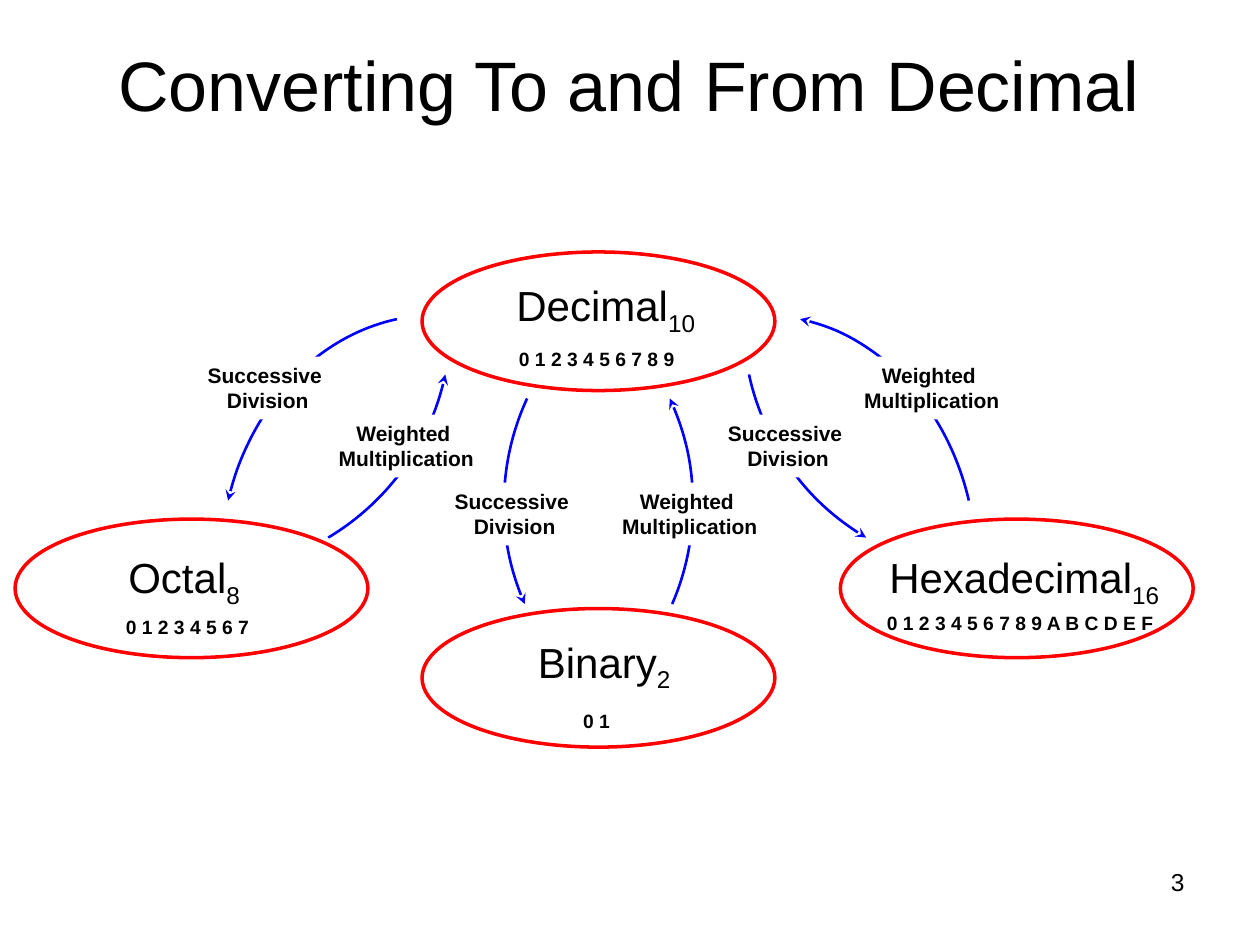
from lxml import etree
from pptx import Presentation
from pptx.dml.color import RGBColor
from pptx.enum.shapes import MSO_SHAPE
from pptx.enum.text import MSO_ANCHOR, MSO_AUTO_SIZE, PP_ALIGN
from pptx.oxml.ns import qn
from pptx.util import Inches, Pt

ARC, OVAL, RECT = MSO_SHAPE.ARC, MSO_SHAPE.OVAL, MSO_SHAPE.RECTANGLE
LEFT, CENTER, RIGHT = PP_ALIGN.LEFT, PP_ALIGN.CENTER, PP_ALIGN.RIGHT
TOP, MIDDLE = MSO_ANCHOR.TOP, MSO_ANCHOR.MIDDLE
FIT_SHAPE = MSO_AUTO_SIZE.SHAPE_TO_FIT_TEXT

FONT = "Arial"
COLORS = {"text": "000000", "paper": "FFFFFF", "arrow": "0000FF", "oval": "FF0000"}
DEGREE = 60000 / 100000  # one degree in adjustment units

DIVISION = "Successive \nDivision"
MULTIPLICATION = "Weighted \nMultiplication"

# Arc box, start and end angle, mirrored, line end that carries the arrowhead
ARROWS = [
    ((-0.42, 0.55, 4, 4), 12.2, 59.16, False, "headEnd"),
    ((1.75, 2.5, 3.42, 4), 197.7, 261.04, False, "headEnd"),
    ((4.33, 2.5, 3.42, 4), 197.7, 261.04, True, "tailEnd"),
    ((5.9, 0.55, 4, 4), 12.2, 59.16, True, "tailEnd"),
    ((4, 2, 4, 4), 335.26, 23.4, True, "tailEnd"),
    ((1.5, 2, 4, 4), 335.26, 23.4, False, "headEnd"),
]

METHODS = [
    (DIVISION, (1.5, 2.83, 1.25, 0.5)),
    (MULTIPLICATION, (2.58, 3.29, 1.29, 0.5)),
    (DIVISION, (5.67, 3.29, 1.17, 0.5)),
    (MULTIPLICATION, (6.75, 2.83, 1.29, 0.5)),
    (DIVISION, (3.5, 3.83, 1.17, 0.5)),
    (MULTIPLICATION, (4.83, 3.83, 1.29, 0.5)),
]

# Name, base, name box, oval corner, digits, digits box
NUMBER_SYSTEMS = [
    ("Octal", "8", (0.92, 4.33, 1.11, 0.5), (0.12, 4.12),
     "0 1 2 3 4 5 6 7", (0.9, 4.83, 1.18, 0.29)),
    ("Hexadecimal", "16", (6.96, 4.33, 2.4, 0.5), (6.67, 4.12),
     "0 1 2 3 4 5 6 7 8 9 A B C D E F", (6.94, 4.8, 2.32, 0.29)),
    ("Binary", "2", (4.17, 5, 1.28, 0.5), (3.35, 4.83),
     "0 1", (4.53, 5.58, 0.42, 0.29)),
    ("Decimal", "10", (4, 2.17, 1.67, 0.51), (3.35, 2),
     "0 1 2 3 4 5 6 7 8 9", (4.02, 2.71, 1.48, 0.29)),
]


def color(name):
    return RGBColor.from_string(COLORS[name])


def inches(box):
    return [Inches(value) for value in box]


def style_text(frame, size, bold=False, align=LEFT, anchor=TOP):
    frame.vertical_anchor = anchor
    for paragraph in frame.paragraphs:
        paragraph.alignment = align
        for run in paragraph.runs:
            run.font.name = FONT
            run.font.size = Pt(size)
            run.font.bold = bold
            run.font.color.rgb = color("text")


def add_outline(slide, preset, box, line_color, width):
    shape = slide.shapes.add_shape(preset, *inches(box))
    shape.shadow.inherit = False
    shape.fill.background()
    shape.line.color.rgb = color(line_color)
    shape.line.width = Pt(width)
    return shape


def add_arc_arrow(slide, box, start, end, mirrored, arrow_end):
    arc = add_outline(slide, ARC, box, "arrow", 1.5)
    arc.adjustments[0] = start * DEGREE
    arc.adjustments[1] = end * DEGREE
    properties = arc.element.spPr
    if mirrored:
        properties.find(qn("a:xfrm")).set("flipH", "1")
    etree.SubElement(properties.find(qn("a:ln")), qn("a:" + arrow_end), type="stealth")


def add_method(slide, text, box):
    """Add a white label that interrupts the arrow behind it."""
    label = slide.shapes.add_shape(RECT, *inches(box))
    label.shadow.inherit = False
    label.fill.solid()
    label.fill.fore_color.rgb = color("paper")
    label.line.fill.background()
    label.text_frame.text = text
    label.text_frame.word_wrap = text == DIVISION
    label.text_frame.auto_size = FIT_SHAPE
    style_text(label.text_frame, 12, bold=True, align=CENTER)


def add_text(slide, text, box, size, **style):
    frame = slide.shapes.add_textbox(*inches(box)).text_frame
    frame.text = text
    frame.word_wrap = False
    frame.auto_size = FIT_SHAPE
    style_text(frame, size, **style)
    return frame


def add_number_system(slide, name, base, name_box, corner, digits, digits_box):
    frame = add_text(slide, name, name_box, 24)
    subscript = frame.paragraphs[0].add_run()
    subscript.text = base
    style_text(frame, 24)
    subscript.font._element.set("baseline", "-25000")
    add_outline(slide, OVAL, (*corner, 2.8, 1.1), "oval", 2)
    add_text(slide, digits, digits_box, 11, bold=True)


def set_title(slide, text):
    title = slide.shapes.title
    title.left, title.top, title.width, title.height = inches((-0.02, 0, 10.02, 1.33))
    title.text_frame.text = text
    style_text(title.text_frame, 40, align=CENTER, anchor=MIDDLE)


def add_page_number(slide, number):
    frame = add_text(slide, number, (7.17, 6.83, 2.33, 0.52), 14, align=RIGHT)
    frame.word_wrap = True
    frame.auto_size = MSO_AUTO_SIZE.NONE


def main():
    deck = Presentation()
    deck.slide_width, deck.slide_height = inches((10, 7.5))
    slide = deck.slides.add_slide(deck.slide_layouts.get_by_name("Title Only"))
    set_title(slide, "Converting To and From Decimal")
    for arrow in ARROWS:
        add_arc_arrow(slide, *arrow)
    for method in METHODS:
        add_method(slide, *method)
    for system in NUMBER_SYSTEMS:
        add_number_system(slide, *system)
    add_page_number(slide, "3")
    deck.save("out.pptx")


if __name__ == "__main__":
    main()
